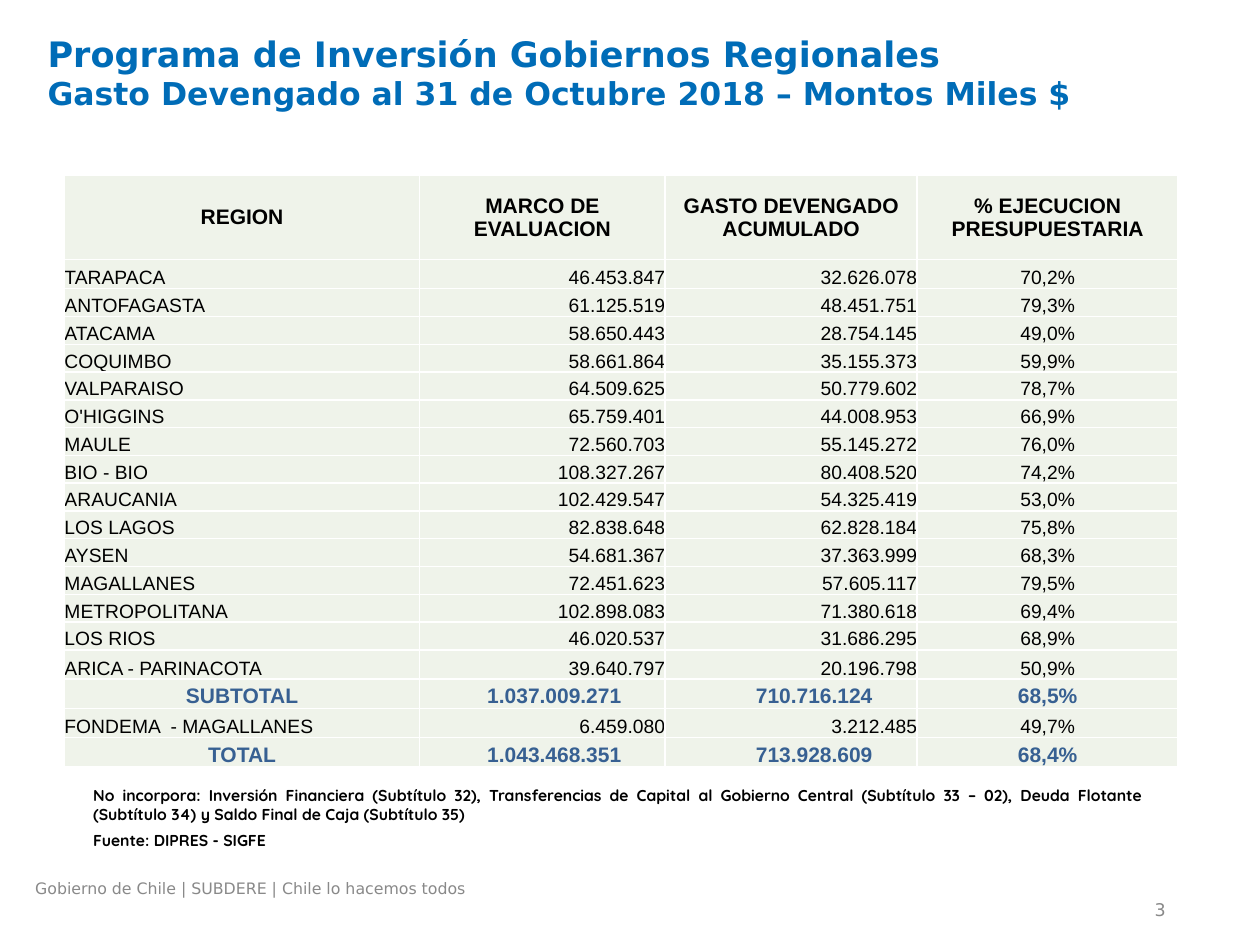
from dataclasses import dataclass

from lxml import etree
from pptx import Presentation
from pptx import util as u
from pptx.dml.color import RGBColor
from pptx.enum import text
from pptx.oxml import ns

ALIGN = text.PP_ALIGN
ANCHOR = text.MSO_ANCHOR


@dataclass(frozen=True)
class Theme:
    # Colours
    title: str = "006CB7"
    grey: str = "898989"
    black: str = "000000"
    total: str = "376092"
    cell: str = "EFF3EA"
    border: str = "FFFFFF"
    # Fonts
    heading_font: str = "DejaVu Sans"
    table_font: str = "Arial"
    note_font: str = "Quicksand"
    # Type sizes in points
    title_size: int = 20
    subtitle_size: int = 18
    strong_size: int = 12
    body_size: int = 11
    number_size: int = 10
    small_size: int = 9


THEME = Theme()

TITLE = ("Programa de Inversión Gobiernos Regionales\v"
         "Gasto Devengado al 31 de Octubre 2018 – Montos Miles $")
NOTES = [
    "No incorpora: Inversión Financiera (Subtítulo 32), Transferencias de Capital al "
    "Gobierno Central (Subtítulo 33 – 02), Deuda Flotante (Subtítulo 34) y "
    "Saldo Final de Caja (Subtítulo 35)",
    "Fuente: DIPRES - SIGFE",
]
HEADER = ("REGION", "MARCO DE EVALUACION", "GASTO DEVENGADO ACUMULADO",
          "% EJECUCION PRESUPUESTARIA")
ROWS = [
    ("TARAPACA", "46.453.847", "32.626.078", "70,2%"),
    ("ANTOFAGASTA", "61.125.519", "48.451.751", "79,3%"),
    ("ATACAMA", "58.650.443", "28.754.145", "49,0%"),
    ("COQUIMBO", "58.661.864", "35.155.373", "59,9%"),
    ("VALPARAISO", "64.509.625", "50.779.602", "78,7%"),
    ("O'HIGGINS", "65.759.401", "44.008.953", "66,9%"),
    ("MAULE", "72.560.703", "55.145.272", "76,0%"),
    ("BIO - BIO", "108.327.267", "80.408.520", "74,2%"),
    ("ARAUCANIA", "102.429.547", "54.325.419", "53,0%"),
    ("LOS LAGOS", "82.838.648", "62.828.184", "75,8%"),
    ("AYSEN", "54.681.367", "37.363.999", "68,3%"),
    ("MAGALLANES", "72.451.623", "57.605.117", "79,5%"),
    ("METROPOLITANA", "102.898.083", "71.380.618", "69,4%"),
    ("LOS RIOS", "46.020.537", "31.686.295", "68,9%"),
    ("ARICA - PARINACOTA", "39.640.797", "20.196.798", "50,9%"),
    ("SUBTOTAL", "1.037.009.271", "710.716.124", "68,5%"),
    ("FONDEMA  - MAGALLANES", "6.459.080", "3.212.485", "49,7%"),
    ("TOTAL", "1.043.468.351", "713.928.609", "68,4%"),
]
COLUMN_WIDTHS = (7.16, 4.95, 5.08, 5.26)
ROW_HEIGHTS = [1.69, 0.59] + [0.56] * 13 + [0.59] * 4
BODY_ALIGN = (ALIGN.LEFT, ALIGN.RIGHT, ALIGN.RIGHT, ALIGN.CENTER)
TOTAL_INDENTS = (0, 0.48, 0.93, 0)  # the summed amounts sit right of centre


def style_span(span, font, size, color, bold=False):
    span.font.name = font
    span.font.size = u.Pt(size)
    span.font.bold = bold
    span.font.color.rgb = RGBColor.from_string(color)


def add_text(page, place, lines, font, size, color, bold=False, align=ALIGN.LEFT):
    """Add a wrapped text box; place is left, top, width, height in cm."""
    box = page.shapes.add_textbox(*(u.Cm(length) for length in place))
    frame = box.text_frame
    frame.word_wrap = True
    for index, line in enumerate(lines):
        para = frame.paragraphs[0] if index == 0 else frame.add_paragraph()
        para.text = line
        para.alignment = align
        for span in para.runs:
            style_span(span, font, size, color, bold)
    return frame


def add_borders(cell):
    properties = cell._tc.get_or_add_tcPr()
    for position, side in enumerate(("lnL", "lnR", "lnT", "lnB")):
        line = etree.Element(ns.qn("a:" + side), w=str(u.Pt(1)))
        fill = etree.SubElement(line, ns.qn("a:solidFill"))
        etree.SubElement(fill, ns.qn("a:srgbClr"), val=THEME.border)
        properties.insert(position, line)


def fill_cell(cell, value, align, anchor, strong, color, indent=0):
    cell.margin_left = u.Cm(indent)
    cell.margin_right = cell.margin_top = cell.margin_bottom = 0
    cell.vertical_anchor = anchor
    cell.fill.solid()
    cell.fill.fore_color.rgb = RGBColor.from_string(THEME.cell)
    add_borders(cell)
    para = cell.text_frame.paragraphs[0]
    para.text = value
    para.alignment = align
    size = THEME.strong_size if strong else THEME.body_size
    style_span(para.runs[0], THEME.table_font, size, color, strong)


def add_budget_table(page):
    frame = page.shapes.add_table(
        len(ROW_HEIGHTS), len(COLUMN_WIDTHS), u.Cm(1.3), u.Cm(3.54),
        u.Cm(sum(COLUMN_WIDTHS)), u.Cm(sum(ROW_HEIGHTS)))
    table = frame.table
    table.first_row = table.horz_banding = False
    for column, width in zip(table.columns, COLUMN_WIDTHS):
        column.width = u.Cm(width)
    for row, height in zip(table.rows, ROW_HEIGHTS):
        row.height = u.Cm(height)

    # Header
    for cell, label in zip(table.rows[0].cells, HEADER):
        fill_cell(cell, label, ALIGN.CENTER, ANCHOR.MIDDLE, True, THEME.black)

    # Regions and totals
    for index, values in enumerate(ROWS, start=1):
        is_total = values[0] in ("SUBTOTAL", "TOTAL")
        for column, value in enumerate(values):
            fill_cell(
                table.cell(index, column), value,
                ALIGN.CENTER if is_total else BODY_ALIGN[column],
                ANCHOR.BOTTOM, is_total,
                THEME.total if is_total else THEME.black,
                TOTAL_INDENTS[column] if is_total else 0)


def main():
    deck = Presentation()
    deck.slide_width, deck.slide_height = u.Cm(25.4), u.Cm(19.05)
    page = deck.slides.add_slide(deck.slide_layouts[6])

    # Page number
    number = add_text(page, (17.83, 18.08, 5.92, 0.53), ["3"], THEME.heading_font,
                      THEME.number_size, THEME.grey, align=ALIGN.RIGHT)
    number.vertical_anchor = ANCHOR.MIDDLE

    # Title
    title = add_text(page, (0.71, 0.53, 22.78, 2.39), [TITLE], THEME.heading_font,
                     THEME.title_size, THEME.title, bold=True)
    title.paragraphs[0].runs[1].font.size = u.Pt(THEME.subtitle_size)

    # Footer
    add_text(page, (0.46, 17.58, 16.46, 0.69),
             ["Gobierno de Chile | SUBDERE | Chile lo hacemos todos"],
             THEME.heading_font, THEME.small_size, THEME.grey)

    # Notes under the table
    notes = add_text(page, (1.63, 15.72, 21.62, 1.6), NOTES, THEME.note_font,
                     THEME.small_size, THEME.black, bold=True)
    notes.paragraphs[0].alignment = ALIGN.JUSTIFY
    notes.paragraphs[1].space_before = u.Pt(4)

    add_budget_table(page)
    deck.save("out.pptx")


if __name__ == "__main__":
    main()
